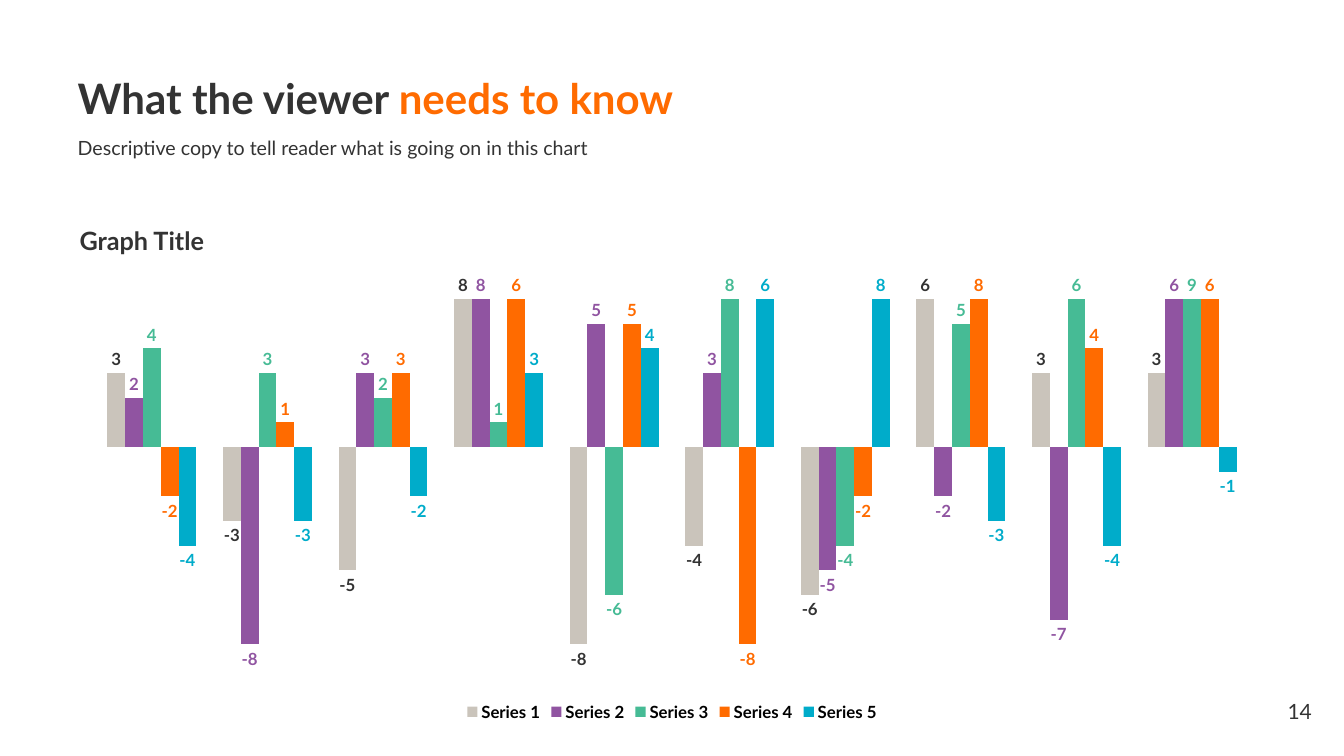
from lxml.etree import SubElement
from pptx import Presentation
from pptx.chart.data import CategoryChartData
from pptx.dml.color import RGBColor
from pptx.enum.chart import XL_CHART_TYPE as ChartType
from pptx.enum.chart import XL_LABEL_POSITION as LabelPosition
from pptx.enum.chart import XL_LEGEND_POSITION as LegendPosition
from pptx.enum.text import MSO_ANCHOR as Anchor
from pptx.enum.text import MSO_AUTO_SIZE as AutoSize
from pptx.enum.text import PP_ALIGN as Align
from pptx.oxml import parse_xml
from pptx.oxml.ns import nsdecls, qn
from pptx.util import Inches, Pt

BLACK = RGBColor(0x00, 0x00, 0x00)
CHARCOAL = RGBColor(0x33, 0x33, 0x33)
STONE = RGBColor(0xCA, 0xC4, 0xBB)
PURPLE = RGBColor(0x90, 0x54, 0xA1)
GREEN = RGBColor(0x46, 0xBB, 0x95)
ORANGE = RGBColor(0xFF, 0x6B, 0x00)
CYAN = RGBColor(0x00, 0xAC, 0xCA)

# Bar colour, label colour and values of each series
SERIES = [
    (STONE, CHARCOAL, (3, -3, -5, 8, -8, -4, -6, 6, 3, 3)),
    (PURPLE, PURPLE, (2, -8, 3, 8, 5, 3, -5, -2, -7, 6)),
    (GREEN, GREEN, (4, 3, 2, 1, -6, 8, -4, 5, 6, 9)),
    (ORANGE, ORANGE, (-2, 1, 3, 6, 5, -8, -2, 8, 4, 6)),
    (CYAN, CYAN, (-4, -3, -2, 3, 4, 6, 8, -3, -4, -1)),
]
PLOT_SHARES = {"x": 0.07, "y": 0.33, "w": 0.86, "h": 0.62}


def apply(target, formats):
    for attribute, value in formats.items():
        setattr(target, attribute, value)


class ChartSlide:
    font_name = "Lato"

    def __init__(self, deck):
        self.width, self.height = deck.slide_width, deck.slide_height
        self.slide = deck.slides.add_slide(deck.slide_layouts[1])

    def area(self, left, top, width, height):
        """Turn percentages of the slide into left, top, width and height."""
        return (int(self.width * left / 100), int(self.height * top / 100),
                int(self.width * width / 100), int(self.height * height / 100))

    def set_font(self, font, size, color, bold=False):
        apply(font, {"name": self.font_name, "size": Pt(size), "bold": bold})
        font.color.rgb = color

    def fill_frame(self, frame, parts, size, bold, frame_format, **formats):
        """Fill the frame with one paragraph of (text, colour) parts."""
        apply(frame, {"word_wrap": True, **frame_format})
        paragraph = frame.paragraphs[0]
        apply(paragraph, {"alignment": Align.LEFT, **formats})
        for text, color in parts:
            run = paragraph.add_run()
            run.text = text
            self.set_font(run.font, size, color, bold)

    def placeholder(self, index, area, parts, size, bold, anchor):
        holder = self.slide.placeholders[index]
        apply(holder, dict(zip(("left", "top", "width", "height"), self.area(*area))))
        properties = holder.text_frame.paragraphs[0]._p.get_or_add_pPr()
        for indent in ("marL", "indent"):
            properties.set(indent, "0")
        SubElement(properties, qn("a:buNone"))
        self.fill_frame(holder.text_frame, parts, size, bold,
                        {"auto_size": AutoSize.NONE, "vertical_anchor": anchor},
                        line_spacing=0.9, space_before=Pt(0))

    def text(self, area, content, size, bold=False, alignment=Align.LEFT):
        box = self.slide.shapes.add_textbox(*self.area(*area))
        self.fill_frame(box.text_frame, [(content, CHARCOAL)], size, bold,
                        {"auto_size": AutoSize.SHAPE_TO_FIT_TEXT}, alignment=alignment)

    def column_chart(self, area, series_list):
        chart_data = CategoryChartData()
        chart_data.categories = [str(n) for n in range(1, len(series_list[0][2]) + 1)]
        for number, (_, _, values) in enumerate(series_list, 1):
            chart_data.add_series(f"Series {number}", values)
        chart = self.slide.shapes.add_chart(
            ChartType.COLUMN_CLUSTERED, *self.area(*area), chart_data).chart
        apply(chart, {"has_title": False, "has_legend": True})
        apply(chart.font, {"name": "Calibri", "size": Pt(10)})
        chart.font.color.rgb = BLACK
        apply(chart.legend, {"position": LegendPosition.BOTTOM,
                             "include_in_layout": False})
        self.set_font(chart.legend.font, 12, BLACK, True)
        apply(chart.category_axis, {"visible": False, "has_major_gridlines": False})
        apply(chart.value_axis, {"visible": False, "has_major_gridlines": False,
                                 "minimum_scale": -10, "maximum_scale": 6})
        plot = chart.plots[0]
        apply(plot, {"gap_width": 150, "overlap": 0, "vary_by_categories": False})
        for series, (bar_color, label_color, _) in zip(plot.series, series_list):
            series.invert_if_negative = False
            series.format.fill.solid()
            series.format.fill.fore_color.rgb = bar_color
            labels = series.data_labels
            apply(labels, {"show_value": True, "position": LabelPosition.OUTSIDE_END})
            self.set_font(labels.font, 12, label_color, True)
        self.place_plot(chart)

    def place_plot(self, chart):
        """Fix the inner plot area and leave the chart background clear."""
        chart_space = chart._chartSpace
        plot_area = chart_space.find(qn("c:chart")).find(qn("c:plotArea"))
        for automatic in plot_area.findall(qn("c:layout")):
            plot_area.remove(automatic)
        layout = parse_xml(f"<c:layout {nsdecls('c')}/>")
        manual = SubElement(layout, qn("c:manualLayout"))
        settings = {"layoutTarget": "inner", "xMode": "edge", "yMode": "edge",
                    **PLOT_SHARES}
        for tag, value in settings.items():
            SubElement(manual, qn(f"c:{tag}")).set("val", str(value))
        plot_area.insert(0, layout)
        chart_space.find(qn("c:txPr")).addprevious(parse_xml(
            f"<c:spPr {nsdecls('c', 'a')}><a:noFill/><a:ln><a:noFill/></a:ln></c:spPr>"))


def main():
    deck = Presentation()
    apply(deck, {"slide_width": Inches(13.33), "slide_height": Inches(7.5)})
    page = ChartSlide(deck)
    page.column_chart((0, 11.73, 100, 84.27), SERIES)
    page.placeholder(0, (5.03, 7.47, 73.67, 11.87),
                     [("What the viewer ", CHARCOAL), ("needs to know", ORANGE)],
                     30, True, Anchor.MIDDLE)
    page.placeholder(1, (5.03, 17.6, 54.84, 8.27),
                     [("Descriptive copy to tell reader what is going on in this chart",
                       CHARCOAL)], 14, False, Anchor.TOP)
    page.text((5.18, 29.2, 54.69, 5.33), "Graph Title", 18, bold=True)
    page.text((91.67, 91.73, 6.68, 4.67), "14", 15, alignment=Align.RIGHT)
    deck.save("out.pptx")


if __name__ == "__main__":
    main()
